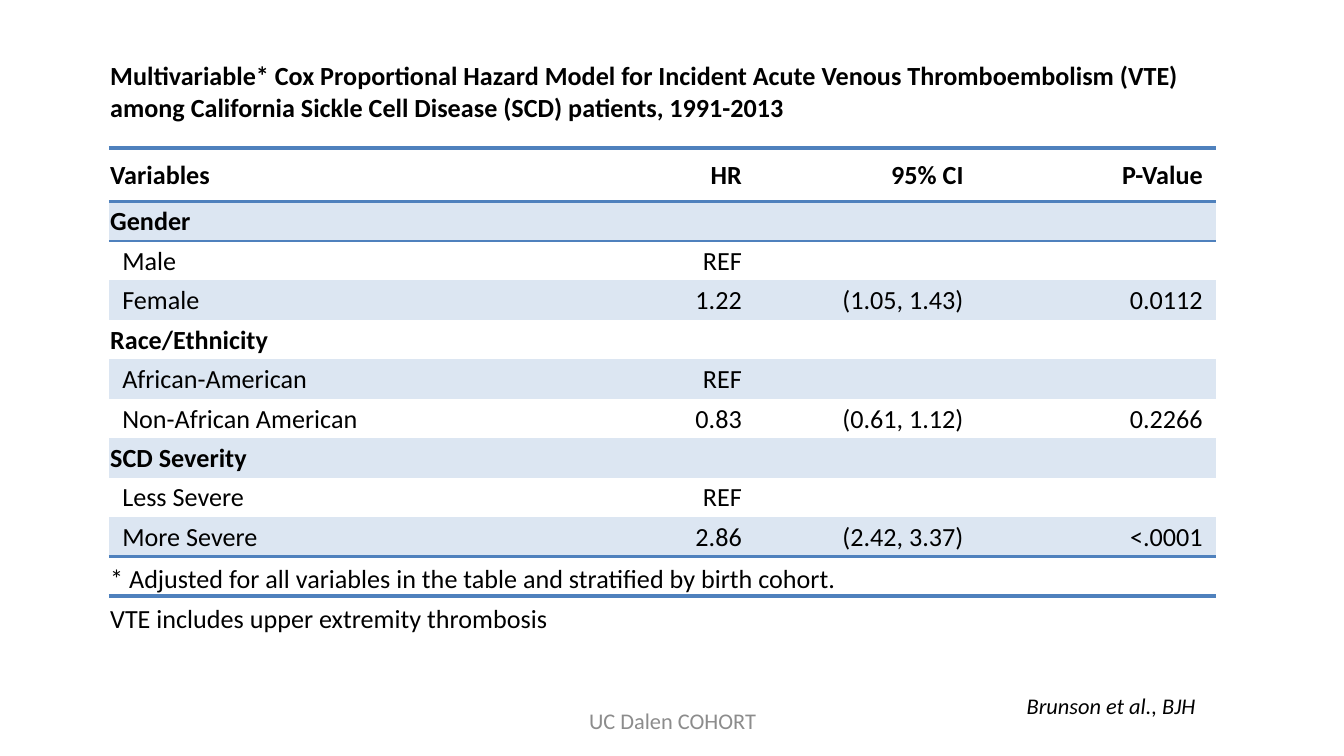
from dataclasses import dataclass

from lxml import etree
from pptx import Presentation
from pptx.dml.color import RGBColor
from pptx.enum.text import MSO_ANCHOR, PP_ALIGN
from pptx.oxml.ns import qn
from pptx.util import Inches, Pt

LEFT, CENTER, RIGHT = PP_ALIGN.LEFT, PP_ALIGN.CENTER, PP_ALIGN.RIGHT
MIDDLE, BOTTOM = MSO_ANCHOR.MIDDLE, MSO_ANCHOR.BOTTOM
BLACK = RGBColor(0, 0, 0)
GRAY = RGBColor(0x8C, 0x8C, 0x8C)
BLUE = RGBColor(0x4F, 0x81, 0xBD)
PALE = RGBColor(0xDC, 0xE6, 0xF2)
PLAIN = "{2D5ABB26-0587-4C30-8999-92F81FD0307C}"
WIDTHS = (2.58, 2.23, 1.65, 1.78)
HEIGHT, TITLE, HEAD = 4.46, 0.83, 0.4


@dataclass
class Row:
    texts: tuple
    bold: bool = False
    indent: float = 0.01
    fill: bool = False
    span: bool = False
    anchor: MSO_ANCHOR = MIDDLE
    top: float = 0
    base: float = 0


@dataclass
class Note:
    text: str
    box: tuple
    align: PP_ALIGN
    format: dict
    wrap: bool = True


def level(name: str, *values: str, **kwargs) -> Row:
    return Row((name, *values), indent=0.1, **kwargs)


ROWS = (
    Row(("Multivariable* Cox Proportional Hazard Model for Incident Acute "
         "Venous Thromboembolism (VTE) among California Sickle Cell Disease "
         "(SCD) patients, 1991-2013",), bold=True, span=True, base=2.25),
    Row(("Variables", "HR", "95% CI", "P-Value"), bold=True, top=2.25, base=1.5),
    Row(("Gender",), bold=True, fill=True, top=1.5),
    level("Male", "REF"),
    level("Female", "1.22", "(1.05, 1.43)", "0.0112", fill=True),
    Row(("Race/Ethnicity",), bold=True),
    level("African-American", "REF", fill=True),
    level("Non-African American", "0.83", "(0.61, 1.12)", "0.2266"),
    Row(("SCD Severity",), bold=True, fill=True),
    level("Less Severe", "REF"),
    level("More Severe", "2.86", "(2.42, 3.37)", "<.0001", fill=True, base=2.25),
    Row(("* Adjusted for all variables in the table and stratified by birth "
         "cohort.",), span=True, anchor=BOTTOM, top=2.25),
    Row(("VTE includes upper extremity thrombosis",), span=True, anchor=BOTTOM),
)
NOTES = (
    Note("UC Dalen COHORT", (3.42, 5.21, 3.17, 0.3), CENTER, {"color": GRAY}),
    Note("Brunson et al., BJH", (7.54, 5.1, 1.51, 0.3), LEFT,
         {"italic": True}, wrap=False),
)


def style(font, **values) -> None:
    font.color.rgb = values.pop("color", BLACK)
    for name, value in ({"name": "Calibri"} | values).items():
        setattr(font, name, value)


def write(para, text: str, align: PP_ALIGN, **values) -> None:
    para.alignment = align
    if text:
        run = para.add_run()
        run.text = text
        style(run.font, **values)
    else:
        etree.SubElement(para._p, qn("a:endParaRPr"), sz="1400")


def border(cell, side: str, width: float) -> None:
    line = etree.Element(qn(f"a:{side}"), w=str(Pt(width)))
    fill = etree.SubElement(line, qn("a:solidFill"))
    etree.SubElement(fill, qn("a:srgbClr"), val=str(BLUE))
    cell._tc.get_or_add_tcPr().insert(0, line)


def draw_cell(cell, row: Row, col: int, text: str) -> None:
    first = col == 0
    format = {
        "margin_left": Inches(row.indent if first else 0),
        "margin_right": Inches(0.01 if first else 0.1),
        "margin_top": Inches(0.01),
        "margin_bottom": 0,
        "vertical_anchor": row.anchor,
    }
    for name, value in format.items():
        setattr(cell, name, value)
    write(cell.text_frame.paragraphs[0], text, LEFT if first else RIGHT,
          size=Pt(14), bold=row.bold)
    if row.fill:
        cell.fill.solid()
        cell.fill.fore_color.rgb = PALE
    else:
        cell.fill.background()
    for side, width in (("lnB", row.base), ("lnT", row.top)):
        if width:
            border(cell, side, width)


def draw_table(slide) -> None:
    table = slide.shapes.add_table(
        len(ROWS), len(WIDTHS), Inches(0.81), Inches(0.27),
        Inches(sum(WIDTHS)), Inches(HEIGHT)).table
    table._tbl.tblPr.find(qn("a:tableStyleId")).text = PLAIN
    table.first_row = table.horz_banding = False
    for col, width in zip(table.columns, WIDTHS):
        col.width = Inches(width)
    step = (HEIGHT - TITLE - HEAD) / (len(ROWS) - 2)
    for i, row in enumerate(ROWS):
        table.rows[i].height = Inches((TITLE, HEAD)[i] if i < 2 else step)
        if row.span:
            table.cell(i, 0).merge(table.cell(i, len(WIDTHS) - 1))
        for j in range(len(WIDTHS)):
            text = row.texts[j] if j < len(row.texts) else ""
            draw_cell(table.cell(i, j), row, j, text)


def draw_note(slide, note: Note) -> None:
    box = slide.shapes.add_textbox(*map(Inches, note.box))
    frame = box.text_frame
    frame.word_wrap = note.wrap
    frame.vertical_anchor = MIDDLE
    write(frame.paragraphs[0], note.text, note.align, size=Pt(12), **note.format)


def main() -> None:
    deck = Presentation()
    deck.slide_width, deck.slide_height = Inches(10), Inches(10 * 9 / 16)
    slide = deck.slides.add_slide(deck.slide_layouts[6])
    for note in NOTES:
        draw_note(slide, note)
    draw_table(slide)
    deck.save("out.pptx")


if __name__ == "__main__":
    main()
